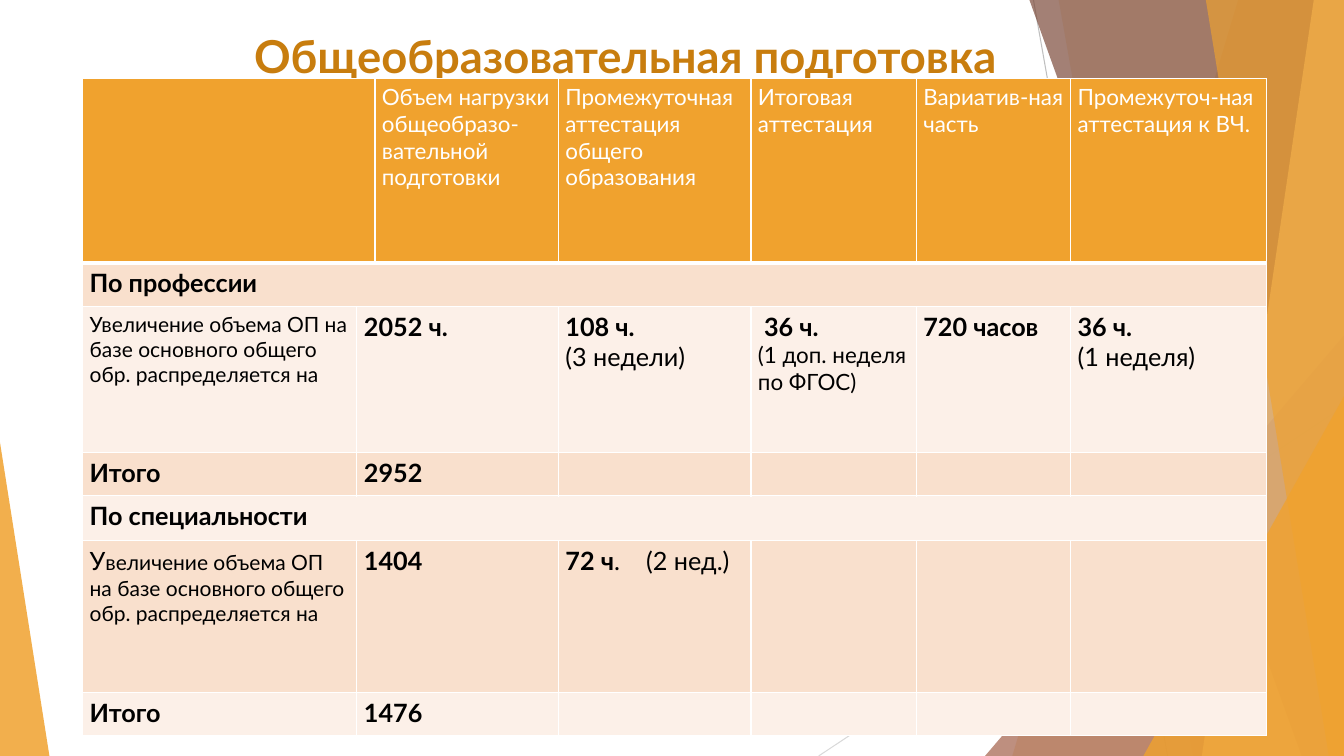
from lxml import etree
from pptx import Presentation
from pptx.dml.color import RGBColor
from pptx.enum.shapes import MSO_CONNECTOR, MSO_SHAPE
from pptx.enum.text import MSO_ANCHOR, PP_ALIGN
from pptx.oxml.ns import qn
from pptx.util import Pt

PX = 9144  # 100 px to the inch
WIDTH, HEIGHT = 1333, 750
FONT = "Lato"
ORANGE, BROWN, WHITE, BLACK = "F0A22E", "A5644E", "FFFFFF", "000000"
DARK_BAND, LIGHT_BAND = "F9E0CD", "FCF0E8"
STRAIGHT = MSO_CONNECTOR.STRAIGHT
TRIANGLE = MSO_SHAPE.ISOSCELES_TRIANGLE
TOP, LEFT = MSO_ANCHOR.TOP, PP_ALIGN.LEFT

COLUMNS = [272, 13, 182, 191, 164, 153, 194]
ROWS = [183, 43, 145, 43, 44, 151, 43]
INCREASE = "величение объема ОП на базе основного общего обр. распределяется на"
HEADINGS = {
    2: "Объем нагрузки общеобразо-вательной подготовки",
    3: "Промежуточная аттестация общего образования",
    4: "Итоговая аттестация",
    5: "Вариатив-ная часть",
    6: "Промежуточ-ная аттестация к ВЧ.",
}
BOLD, PLAIN = {"bold": True}, {}
SMALL, MEDIUM = {"size": 15}, {"size": 16}
# (row, column): paragraphs, each a list of (text, format)
BODY = {
    (1, 0): [[("По профессии", BOLD)]],
    (2, 0): [[("У" + INCREASE, SMALL)]],
    (2, 1): [[("2052 ч.", BOLD)]],
    (2, 3): [[("108 ч.", BOLD)], [("(3 недели)", PLAIN)]],
    (2, 4): [[(" 36 ч.", BOLD)], [("(1 доп. неделя по ФГОС)", MEDIUM)]],
    (2, 5): [[("720 часов", BOLD)]],
    (2, 6): [[("36 ч.", BOLD)], [("(1 неделя)", PLAIN)]],
    (3, 0): [[("Итого", BOLD)]],
    (3, 1): [[("2952", BOLD)]],
    (4, 0): [[("По специальности", BOLD)]],
    (5, 0): [[("У", PLAIN), (INCREASE, SMALL)]],
    (5, 1): [[("1404", BOLD)]],
    (5, 3): [[("72 ч", BOLD), (".\t(2 нед.)", PLAIN)]],
    (6, 0): [[("Итого", BOLD)]],
    (6, 1): [[("1476", BOLD)]],
}


def color(value):
    return RGBColor.from_string(value)


def paint(shape, fill, alpha):
    """Fill a shape with a translucent colour and no outline."""
    shape.shadow.inherit = False
    shape.line.fill.background()
    shape.fill.solid()
    shape.fill.fore_color.rgb = color(fill)
    tint = shape.element.spPr.find(qn("a:solidFill"))[0]
    etree.SubElement(tint, qn("a:alpha"), val=str(alpha * 1000))


def add_span(para, text, size=18, fill=BLACK, bold=False):
    span = para.add_run()
    span.text = text
    span.font.name = FONT
    span.font.size = Pt(size)
    span.font.bold = bold
    span.font.color.rgb = color(fill)


def add_ray(page, start, end, stroke):
    ray = page.shapes.add_connector(STRAIGHT, *(n * PX for n in start + end))
    ray.line.color.rgb = color(stroke)
    ray.line.width = Pt(0.75)
    etree.SubElement(ray.element.spPr, qn("a:effectLst"))


def add_triangle(page, box, peak, fill, alpha):
    triangle = page.shapes.add_shape(TRIANGLE, *(n * PX for n in box))
    triangle.adjustments[0] = peak
    paint(triangle, fill, alpha)


def add_facet(page, top, bottom, fill, alpha):
    """Fill from a slanted left edge to the right side of the slide."""
    builder = page.shapes.build_freeform(top, 0, scale=PX)
    builder.add_line_segments([(WIDTH, 0), (WIDTH, HEIGHT), (bottom, HEIGHT)])
    paint(builder.convert_to_shape(), fill, alpha)


def add_backdrop(page):
    add_ray(page, (1025, 0), (1158, HEIGHT), "BFBFBF")
    add_ray(page, (WIDTH, 403), (812, HEIGHT), "D9D9D9")
    add_facet(page, 1228, 1004, ORANGE, 30)
    add_facet(page, 1050, 1183, ORANGE, 20)
    add_triangle(page, (977, 333, 356, 417), 1, BROWN, 72)
    add_facet(page, 1021, 1291, "7C4B3B", 70)
    add_facet(page, 1303, 1192, "F6C782", 70)
    add_facet(page, 1196, 1318, ORANGE, 65)
    add_triangle(page, (1134, 393, 199, 357), 1, ORANGE, 80)
    add_triangle(page, (0, 439, 49, 311), 0, ORANGE, 85)


def add_title(page, box, text):
    title = page.shapes.title
    title.left, title.top, title.width, title.height = (n * PX for n in box)
    title.element.getparent().append(title.element)  # in front of the backdrop
    frame = title.text_frame
    frame.word_wrap = True
    frame.vertical_anchor = TOP
    frame.paragraphs[0].alignment = LEFT
    add_span(frame.paragraphs[0], text, size=32.4, fill="C87D0E", bold=True)


def style_cell(cell, fill, bottom):
    cell.margin_left = cell.margin_right = 7 * PX
    cell.margin_top = cell.margin_bottom = 5 * PX
    properties = cell._tc.get_or_add_tcPr()
    for side, width in (("L", 1), ("R", 1), ("T", 1), ("B", bottom)):
        border = etree.SubElement(properties, qn("a:ln" + side), w=str(Pt(width)))
        solid = etree.SubElement(border, qn("a:solidFill"))
        etree.SubElement(solid, qn("a:srgbClr"), val=WHITE)
    cell.fill.solid()
    cell.fill.fore_color.rgb = color(fill)


def write_cell(cell, paragraphs):
    frame = cell.text_frame
    for index, spans in enumerate(paragraphs):
        para = frame.add_paragraph() if index else frame.paragraphs[0]
        for text, style in spans:
            add_span(para, text, **style)
            if "\t" in text:
                stops = etree.SubElement(para._p.get_or_add_pPr(), qn("a:tabLst"))
                etree.SubElement(stops, qn("a:tab"), pos=str(80 * PX), algn="l")


def add_hours_table(page, left, top):
    size = (sum(COLUMNS), sum(ROWS))
    frame = page.shapes.add_table(len(ROWS), len(COLUMNS),
                                  *(n * PX for n in (left, top) + size))
    table = frame.table
    for column, width in zip(table.columns, COLUMNS):
        column.width = width * PX
    for row, height in zip(table.rows, ROWS):
        row.height = height * PX

    # Bands and borders
    for row in range(len(ROWS)):
        band = DARK_BAND if row % 2 else LIGHT_BAND
        for column in range(len(COLUMNS)):
            style_cell(table.cell(row, column), band if row else ORANGE,
                       bottom=1 if row else 3)

    # Merged cells: the header label, section rows and the load column
    table.cell(0, 0).merge(table.cell(0, 1))
    for row in (1, 4):
        table.cell(row, 0).merge(table.cell(row, 6))
    for row in (2, 3, 5, 6):
        table.cell(row, 1).merge(table.cell(row, 2))

    # Wording
    for column, heading in HEADINGS.items():
        write_cell(table.cell(0, column),
                   [[(heading, {"size": 16, "fill": WHITE})]])
    for (row, column), paragraphs in BODY.items():
        write_cell(table.cell(row, column), paragraphs)


def main():
    deck = Presentation()
    deck.slide_width, deck.slide_height = WIDTH * PX, HEIGHT * PX
    page = deck.slides.add_slide(deck.slide_layouts[5])
    add_backdrop(page)
    add_title(page, (242, 23, 850, 109), "Общеобразовательная подготовка")
    add_hours_table(page, 82, 78)
    deck.save("out.pptx")


if __name__ == "__main__":
    main()
